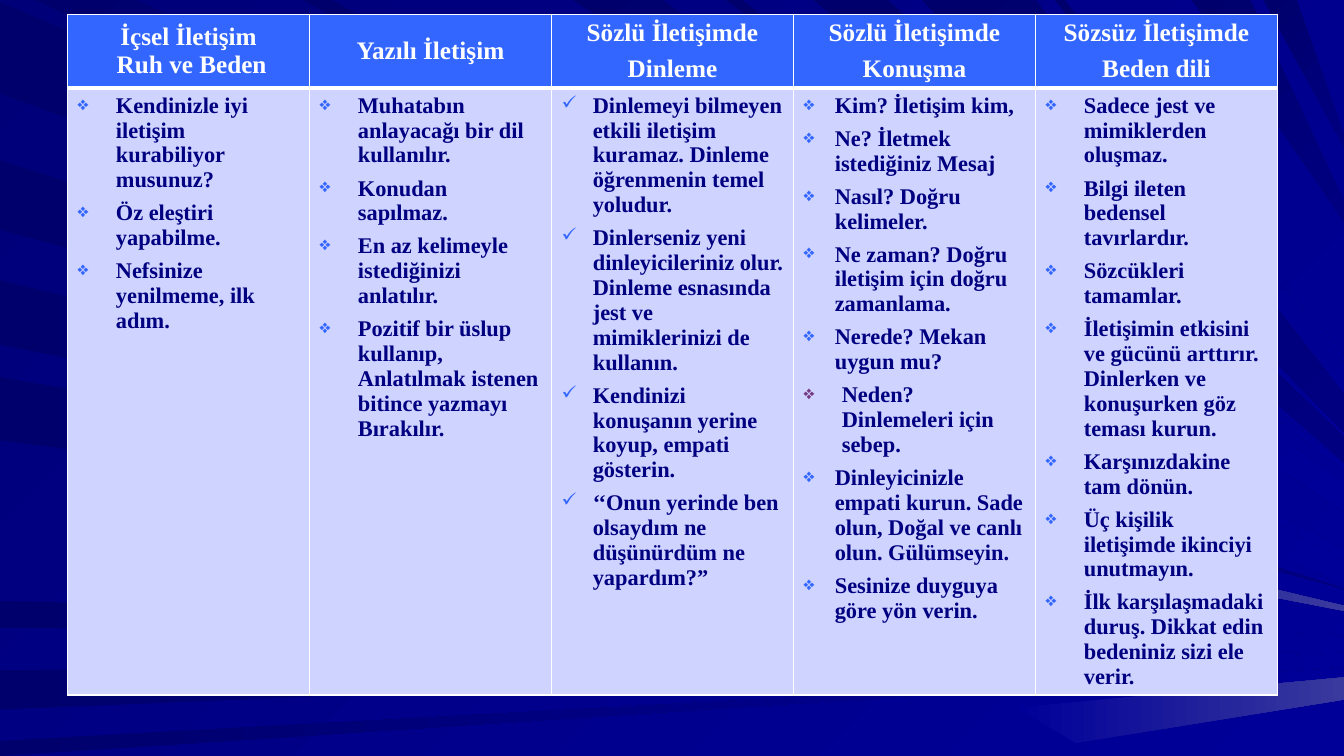
import lxml.etree
import pptx
import pptx.dml.color
import pptx.enum.text
import pptx.oxml.ns
import pptx.util
from pptx.dml.color import RGBColor
from pptx.util import Inches

WHITE = RGBColor(0xFF, 0xFF, 0xFF)
HEADER_BLUE = RGBColor(0x33, 0x66, 0xFF)
CELL_BLUE = RGBColor(0xCE, 0xD3, 0xFF)
PURPLE = RGBColor(0x75, 0x3A, 0x82)
NAVY = RGBColor(0x00, 0x00, 0x80)
BLUE = RGBColor(0x00, 0x00, 0x99)
BACKGROUND_DARK = RGBColor(0x00, 0x00, 0x78)
RAY_DARK = RGBColor(0x00, 0x00, 0x6D)
GLINT = RGBColor(0x39, 0x39, 0x9E)
FONT = "Times New Roman"
WIDTH, HEIGHT = 13.33, 7.5
WIDE, NARROW = 0.38, 0.31
DIAMOND, CHECK = "❖", "✓"

LEFT_RAYS = [(0.02, 0.93, 5.7, NAVY), (1.59, 2.28, 5.84, NAVY), (2.78, 3.42, 6, BLUE),
             (3.74, 4.37, 6.06, BLUE), (5.96, 6.23, 6.31, BLUE),
             (6.65, 7.04, 6.47, BLUE), (7.35, 7.5, 6.62, BLUE)]
TOP_RAYS = [(0.34, 1.35, 5.63, BLUE), (3, 3.29, 5.5, BLUE), (5.68, 6.57, 4.93, BLUE),
            (7.2, 7.36, 4.63, BLUE), (8.07, 8.81, 4.46, NAVY), (9.14, 10.27, 4.1, NAVY),
            (10.46, 10.56, 3.57, BLUE), (11.82, 12.4, 2.1, NAVY), (12.53, 12.86, 1.4, NAVY)]
GLINTS = [[(8.5, 4.85), (8.44, 5.11), (WIDTH, 6.06), (WIDTH, 6.01)],
          [(10.08, 7.02), (10.67, 7.37), (WIDTH, 6.94), (WIDTH, 6.72)]]

COLUMNS = [
    (["İçsel İletişim", " Ruh ve Beden"], 0, DIAMOND, WIDE, [
        "Kendinizle iyi iletişim kurabiliyor musunuz?",
        "Öz eleştiri yapabilme.",
        "Nefsinize yenilmeme, ilk adım."]),
    (["Yazılı İletişim"], 0, DIAMOND, WIDE, [
        "Muhatabın anlayacağı bir dil kullanılır.",
        "Konudan sapılmaz.",
        "En az kelimeyle istediğinizi anlatılır.",
        "Pozitif bir üslup kullanıp, Anlatılmak istenen bitince yazmayı Bırakılır."]),
    (["Sözlü İletişimde", "Dinleme"], 5.8, CHECK, NARROW, [
        "Dinlemeyi bilmeyen etkili iletişim kuramaz. Dinleme öğrenmenin temel yoludur.",
        "Dinlerseniz yeni dinleyicileriniz olur. Dinleme esnasında jest ve mimiklerinizi de kullanın.",
        "Kendinizi konuşanın yerine koyup, empati gösterin.",
        "‘‘Onun yerinde ben olsaydım ne düşünürdüm ne yapardım?”"]),
    (["Sözlü İletişimde", "Konuşma"], 5.8, DIAMOND, NARROW, [
        "Kim? İletişim kim,",
        "Ne? İletmek istediğiniz Mesaj",
        "Nasıl? Doğru kelimeler.",
        "Ne zaman? Doğru iletişim için doğru zamanlama.",
        "Nerede? Mekan uygun mu?",
        "Neden? Dinlemeleri için sebep.",
        "Dinleyicinizle empati kurun. Sade olun, Doğal ve canlı olun. Gülümseyin.",
        "Sesinize duyguya göre yön verin."]),
    (["Sözsüz İletişimde", "Beden dili"], 5.8, DIAMOND, WIDE, [
        "Sadece jest ve mimiklerden oluşmaz.",
        "Bilgi ileten bedensel tavırlardır.",
        "Sözcükleri tamamlar.",
        "İletişimin etkisini ve gücünü arttırır. Dinlerken ve konuşurken göz teması kurun.",
        "Karşınızdakine tam dönün.",
        "Üç kişilik iletişimde ikinciyi unutmayın.",
        "İlk karşılaşmadaki duruş. Dikkat edin bedeniniz sizi ele verir."]),
]
ACCENTED_ITEM = "Neden? Dinlemeleri için sebep."


def add_element(parent, tag, **attributes):
    """Append a DrawingML element and return it."""
    return lxml.etree.SubElement(parent, pptx.oxml.ns.qn(tag), attributes)


def paint(fill, start, end, angle):
    """Fill with a gradient at a clockwise angle."""
    fill.gradient()
    fill.gradient_angle = (360 - angle) % 360
    for stop, color in zip(fill.gradient_stops, (start, end)):
        stop.color.rgb = color


def add_ray(slide, points, start, end, angle):
    """Draw one background ray as a closed outline."""
    corners = [(Inches(x), Inches(y)) for x, y in points]
    builder = slide.shapes.build_freeform(*corners[0])
    builder.add_line_segments(corners[1:], close=True)
    shape = builder.convert_to_shape()
    shape.shadow.inherit = False
    shape.line.fill.background()
    paint(shape.fill, start, end, angle)


def add_background(slide):
    """Add the blue background and the rays that meet its right edge."""
    paint(slide.background.fill, BACKGROUND_DARK, BLUE, 45)
    for near, far, tip, color in LEFT_RAYS:
        add_ray(slide, [(0, near), (0, far), (WIDTH, tip)], RAY_DARK, color, 0)
    for near, far, tip, color in TOP_RAYS:
        spread = (far - near) / 6
        points = [(near, 0), (far, 0), (WIDTH, tip - spread), (WIDTH, tip + spread)]
        add_ray(slide, points, RAY_DARK, color, 45)
    for points in GLINTS:
        add_ray(slide, points, BLUE, GLINT, 0)


def add_text(frame, text, *, size, color, first, space=0, align=None,
             bullet=None, bullet_color=HEADER_BLUE, indent=0):
    """Write one formatted paragraph into a text frame."""
    paragraph = frame.paragraphs[0] if first else frame.add_paragraph()
    properties = paragraph._p.get_or_add_pPr()
    if bullet:
        properties.set("marL", str(Inches(indent)))
        properties.set("indent", str(-Inches(indent)))
        add_element(add_element(properties, "a:buClr"), "a:srgbClr", val=str(bullet_color))
        add_element(properties, "a:buSzPct", val="85000")
        add_element(properties, "a:buChar", char=bullet)
    paragraph.alignment = align
    paragraph.space_before = pptx.util.Pt(0 if first else space)
    run = paragraph.add_run()
    run.text = text
    run.font.name = FONT
    run.font.size = pptx.util.Pt(size)
    run.font.bold = True
    run.font.color.rgb = color


def style_cell(cell, color, top, bottom):
    """Set the fill of a cell and its white borders, widths in points."""
    properties = cell._tc.get_or_add_tcPr()
    for tag, width in (("a:lnL", 1), ("a:lnR", 1), ("a:lnT", top), ("a:lnB", bottom)):
        line = add_element(properties, tag, w=str(pptx.util.Pt(width)))
        add_element(add_element(line, "a:solidFill"), "a:srgbClr", val=str(WHITE))
    cell.fill.solid()
    cell.fill.fore_color.rgb = color


def add_communication_table(slide):
    """Add the table of the kinds of communication."""
    table = slide.shapes.add_table(2, len(COLUMNS), Inches(0.67), Inches(0.14),
                                   Inches(12), Inches(6.74)).table
    table.first_row = table.horz_banding = False
    table.rows[0].height = Inches(0.72)
    table.rows[1].height = Inches(6.02)
    for column, (titles, title_space, bullet, indent, items) in enumerate(COLUMNS):
        header, body = table.cell(0, column), table.cell(1, column)
        style_cell(header, HEADER_BLUE, 1, 3)
        style_cell(body, CELL_BLUE, 3, 1)
        header.vertical_anchor = pptx.enum.text.MSO_ANCHOR.MIDDLE
        for index, title in enumerate(titles):
            add_text(header.text_frame, title, size=18, color=WHITE, first=index == 0,
                     space=title_space, align=pptx.enum.text.PP_ALIGN.CENTER)
        for index, item in enumerate(items):
            accented = item == ACCENTED_ITEM
            add_text(body.text_frame, item, size=16, color=NAVY, first=index == 0, space=5.8,
                     bullet=bullet, bullet_color=PURPLE if accented else HEADER_BLUE,
                     indent=WIDE if accented else indent)


def main():
    """Build the slide and save it."""
    presentation = pptx.Presentation()
    presentation.slide_width = Inches(WIDTH)
    presentation.slide_height = Inches(HEIGHT)
    slide = presentation.slides.add_slide(presentation.slide_layouts[6])
    add_background(slide)
    add_communication_table(slide)
    presentation.save("out.pptx")


if __name__ == "__main__":
    main()
